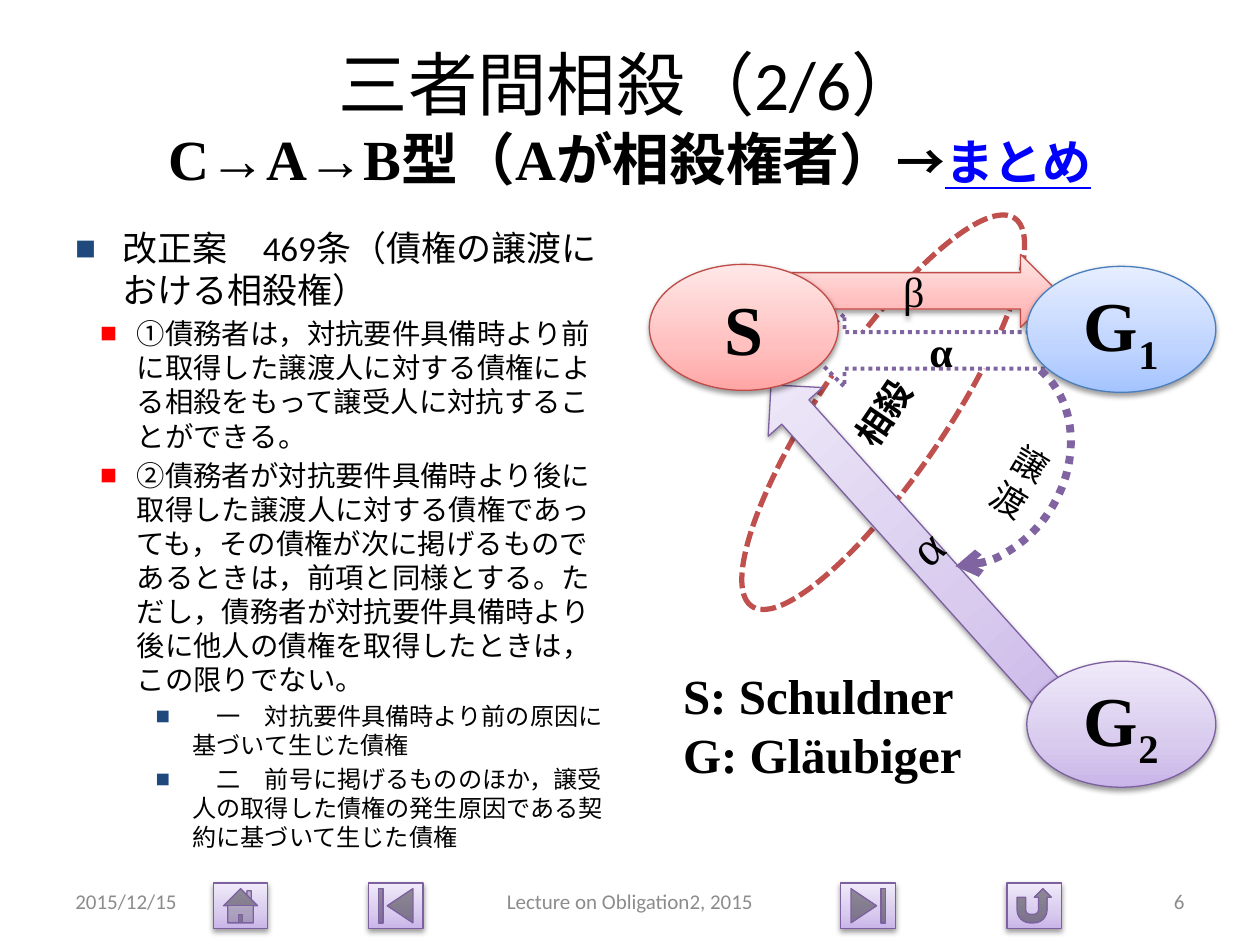
from copy import deepcopy
from dataclasses import dataclass
from typing import NamedTuple, Optional

from lxml.etree import SubElement
from pptx import Presentation
from pptx.dml.color import RGBColor as RGB
from pptx.enum.dml import MSO_LINE as Dash
from pptx.enum.shapes import MSO_SHAPE as Geo
from pptx.enum.text import MSO_ANCHOR as Anchor, PP_ALIGN as Align
from pptx.oxml.ns import qn
from pptx.util import Cm, Pt


class Tint(NamedTuple):
    stops: tuple
    line: str


@dataclass(frozen=True)
class Theme:
    red: Tint = Tint(("FFA6A5", "FFC0BF", "FFE7E7"), "BF4C48")
    blue: Tint = Tint(("A4C4FF", "BFD4FF", "E6EEFF"), "4B7EBC")
    purple: Tint = Tint(("C9B5E8", "D8CBEE", "F0EAF9"), "7D60A0")
    text: str = "000000"
    link: str = "0000FF"
    footer: str = "8C8C8C"
    white: str = "FFFFFF"
    offset: str = "C0504D"
    transfer: str = "8064A2"
    navy: str = "1F497D"
    bullet_red: str = "FF0000"
    sans: str = "Calibri"
    serif: str = "Times New Roman"
    cjk: str = "Noto Sans CJK JP"
    title: float = 39.6
    subtitle: float = 32.4
    summary: float = 27.9
    party: float = 40
    legend: float = 28
    claim: float = 24
    label: float = 20
    small: float = 12


T = Theme()


class Box(NamedTuple):
    x: float
    y: float
    w: float
    h: float

    def cm(self):
        return [Cm(v) for v in self]


class Level(NamedTuple):
    size: float
    margin: float
    hang: float
    color: str


class Item(NamedTuple):
    level: Level
    text: str


class Claim(NamedTuple):
    geo: Geo
    box: Box
    rotation: float
    tint: Tint
    text: str
    size: float


class Party(NamedTuple):
    x: float
    y: float
    tint: Tint
    name: str
    index: str


class Footer(NamedTuple):
    x: float
    w: float
    text: str
    align: Align


TOP = Level(20, 0.95, 0.95, T.navy)
SUB = Level(16.2, 1.24, 0.74, T.bullet_red)
ITEM = Level(13.8, 2.36, 0.74, T.navy)

ARTICLE = [
    Item(TOP, "改正案　469条（債権の譲渡における相殺権）"),
    Item(SUB, "①債務者は，対抗要件具備時より前に取得した譲渡人に対する債権による相殺をもって譲受人に対抗することができる。"),
    Item(SUB, "②債務者が対抗要件具備時より後に取得した譲渡人に対する債権であっても，その債権が次に掲げるものであるときは，"
              "前項と同様とする。ただし，債務者が対抗要件具備時より後に他人の債権を取得したときは，この限りでない。"),
    Item(ITEM, "　一　対抗要件具備時より前の原因に基づいて生じた債権"),
    Item(ITEM, "　二　前号に掲げるもののほか，譲受人の取得した債権の発生原因である契約に基づいて生じた債権"),
]
BUTTONS = [
    (Geo.ACTION_BUTTON_HOME, 4.3),
    (Geo.ACTION_BUTTON_BEGINNING, 7.43),
    (Geo.ACTION_BUTTON_END, 16.95),
    (Geo.ACTION_BUTTON_RETURN, 20.3),
]
CLAIMS = [
    Claim(Geo.RIGHT_ARROW, Box(15.9, 5.13, 5.41, 1.47), 0, T.red, "β", T.claim),
    Claim(Geo.UP_ARROW, Box(17.7, 6.65, 1.47, 8.66), 318.1, T.purple, "α", 28),
]
PARTIES = [
    Party(13.09, 5.33, T.red, "S", ""),
    Party(20.7, 5.37, T.blue, "G", "1"),
    Party(20.7, 13.33, T.purple, "G", "2"),
]
FOOTERS = [
    Footer(1.27, 5.92, "2015/12/15", Align.LEFT),
    Footer(8.68, 8.04, "Lecture on Obligation2, 2015", Align.CENTER),
    Footer(18.21, 5.92, "6", Align.RIGHT),
]


def add_run(p, text: str, *, size: float, font: str = T.serif, color: str = T.text,
            bold: bool = False, underline: bool = False, baseline: int = 0):
    r = p.add_run()
    r.text = text
    f = r.font
    f.size, f.name, f.bold, f.underline = Pt(size), font, bold, underline
    f.color.rgb = RGB.from_string(color)
    rpr = r._r.get_or_add_rPr()
    SubElement(rpr, qn("a:ea"), typeface=T.cjk)
    if baseline:
        rpr.set("baseline", str(baseline * 1000))


def add_frame(s, box: Box, align: Align = Align.LEFT, anchor: Anchor = Anchor.TOP):
    tf = s.shapes.add_textbox(*box.cm()).text_frame
    tf.word_wrap = True
    tf.vertical_anchor = anchor
    tf.paragraphs[0].alignment = align
    return tf


def add_shape(s, geo: Geo, box: Box, rotation: float = 0):
    sp = s.shapes.add_shape(geo, *box.cm())
    sp.rotation = rotation
    sp.shadow.inherit = False
    tf = sp.text_frame
    tf.vertical_anchor = Anchor.MIDDLE
    tf.paragraphs[0].alignment = Align.CENTER
    return sp, tf.paragraphs[0]


def add_tinted(s, geo: Geo, box: Box, tint: Tint, rotation: float = 0):
    sp, p = add_shape(s, geo, box, rotation)
    sp.fill.gradient()
    sp.fill.gradient_angle = 90
    props = sp._element.spPr
    stops = props.find(".//" + qn("a:gsLst"))
    stops.append(deepcopy(stops[-1]))
    for stop, position, color in zip(sp.fill.gradient_stops, (0, 0.35, 1), tint.stops):
        stop.position = position
        stop.color.rgb = RGB.from_string(color)
    sp.line.color.rgb = RGB.from_string(tint.line)
    sp.line.width = Pt(0.75)
    shadow = SubElement(props.find(qn("a:effectLst")), qn("a:outerShdw"),
                        blurRad="40000", dist="20000", dir="5400000", rotWithShape="0")
    black = SubElement(shadow, qn("a:srgbClr"), val="000000")
    SubElement(black, qn("a:alpha"), val="38000")
    return p


def add_dashed(s, geo: Geo, box: Box, color: str, width: float, dash: Dash,
               rotation: float = 0, fill: Optional[str] = None):
    sp, p = add_shape(s, geo, box, rotation)
    if fill:
        sp.fill.solid()
        sp.fill.fore_color.rgb = RGB.from_string(fill)
    else:
        sp.fill.background()
    sp.line.color.rgb = RGB.from_string(color)
    sp.line.width = Pt(width)
    sp.line.dash_style = dash
    return sp, p


def add_item(p, item: Item):
    level = item.level
    p.space_before = Pt(round(level.size * 0.2, 1))
    ppr = p._p.get_or_add_pPr()
    ppr.set("marL", str(Cm(level.margin)))
    ppr.set("indent", str(-Cm(level.hang)))
    SubElement(SubElement(ppr, qn("a:buClr")), qn("a:srgbClr"), val=level.color)
    SubElement(ppr, qn("a:buSzPct"), val="60000")
    SubElement(ppr, qn("a:buFont"), typeface=T.cjk)
    SubElement(ppr, qn("a:buChar"), char="■")
    add_run(p, item.text, size=level.size, font=T.sans)


def add_title(s):
    p = add_frame(s, Box(1.27, 0.76, 22.86, 3.18), Align.CENTER, Anchor.MIDDLE).paragraphs[0]
    add_run(p, "三者間相殺（2/6）", size=T.title, font=T.sans)
    p.add_line_break()
    add_run(p, "C→A→B型（Aが相殺権者）", size=T.subtitle, bold=True)
    add_run(p, "→", size=T.summary, bold=True)
    add_run(p, "まとめ", size=T.summary, bold=True, color=T.link, underline=True)


def add_article(s):
    tf = add_frame(s, Box(1.27, 4.45, 11.33, 12.57))
    for i, item in enumerate(ARTICLE):
        add_item(tf.add_paragraph() if i else tf.paragraphs[0], item)


def add_diagram(s):
    _, p = add_dashed(s, Geo.OVAL, Box(13.08, 7.04, 9.45, 2.54), T.offset, 3, Dash.SQUARE_DOT, 304.1)
    add_run(p, "相殺", size=T.label, font=T.cjk, bold=True)
    _, p = add_dashed(s, Geo.LEFT_ARROW, Box(16.29, 6.33, 5, 1.47), T.transfer, 2.25,
                      Dash.ROUND_DOT, fill=T.white)
    add_run(p, "α", size=T.claim, bold=True)
    for c in CLAIMS:
        add_run(add_tinted(s, c.geo, c.box, c.tint, c.rotation), c.text, size=c.size)
    for party in PARTIES:
        p = add_tinted(s, Geo.OVAL, Box(party.x, party.y, 3.81, 2.54), party.tint)
        add_run(p, party.name, size=T.party, bold=True)
        if party.index:
            add_run(p, party.index, size=T.party, bold=True, baseline=-25)
    arc, p = add_dashed(s, Geo.ARC, Box(17.72, 6.99, 3.76, 4.52), T.transfer, 4.5, Dash.ROUND_DOT, 31)
    arc.adjustments[0], arc.adjustments[1] = 165.92, 40.73
    SubElement(arc.line._get_or_add_ln(), qn("a:tailEnd"), type="arrow")
    add_run(p, "譲渡", size=T.label, font=T.cjk)
    tf = add_frame(s, Box(13.52, 13.29, 6.4, 2.64))
    add_run(tf.paragraphs[0], "S: Schuldner", size=T.legend, bold=True)
    add_run(tf.add_paragraph(), "G: Gläubiger", size=T.legend, bold=True)


def main():
    prs = Presentation()
    prs.slide_width, prs.slide_height = Cm(25.4), Cm(19.05)
    s = prs.slides.add_slide(prs.slide_layouts[6])
    for geo, x in BUTTONS:
        add_tinted(s, geo, Box(x, 17.8, 1.1, 0.92), T.purple)
    add_title(s)
    add_article(s)
    for f in FOOTERS:
        p = add_frame(s, Box(f.x, 17.65, f.w, 1.02), f.align, Anchor.MIDDLE).paragraphs[0]
        add_run(p, f.text, size=T.small, font=T.sans, color=T.footer)
    add_diagram(s)
    prs.save("out.pptx")


if __name__ == "__main__":
    main()
